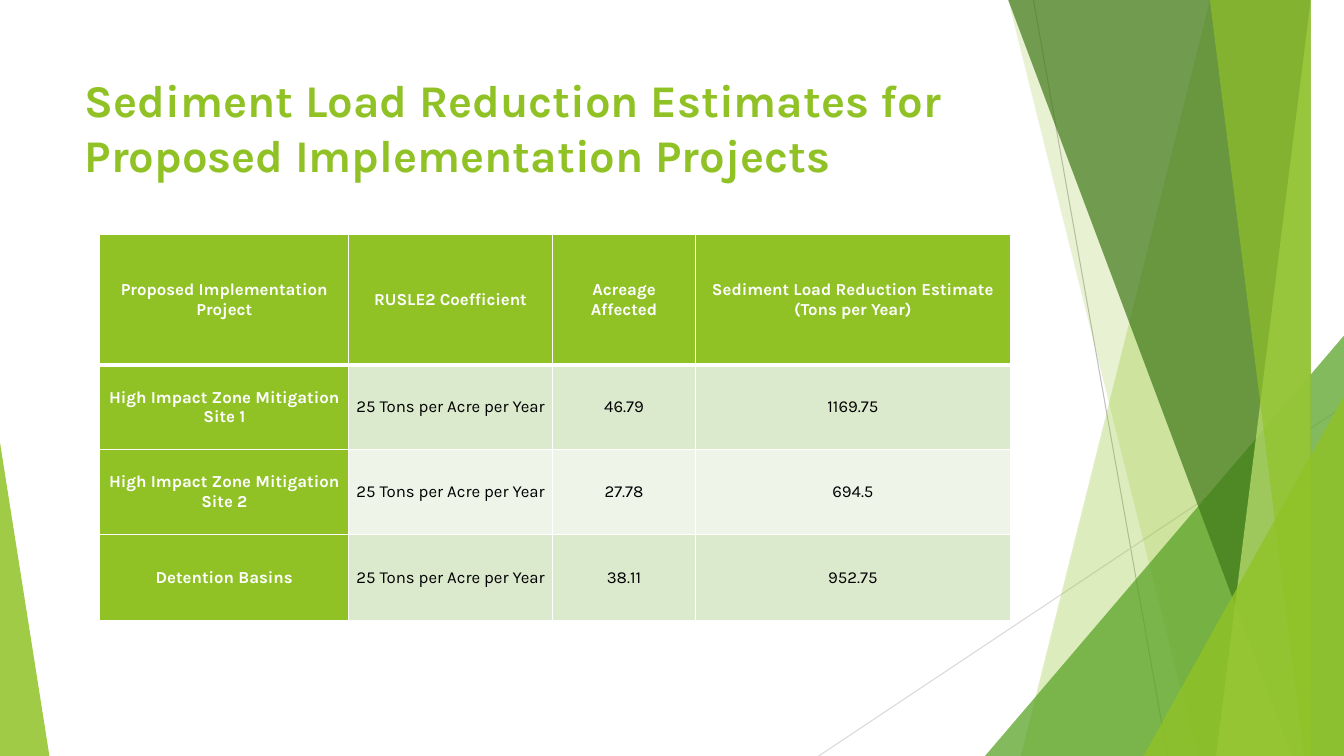
from lxml.etree import SubElement
from pptx import Presentation
from pptx.dml.color import RGBColor
from pptx.enum.shapes import MSO_CONNECTOR, MSO_SHAPE
from pptx.enum.text import MSO_ANCHOR as Anchor, PP_ALIGN as Align
from pptx.oxml import parse_xml
from pptx.oxml.ns import nsdecls, qn
from pptx.util import Inches, Pt

WIDTH, HEIGHT = 13.33, 7.5
LIME, WHITE, BLACK = "90C226", "FFFFFF", "000000"


def write(frame, text, size=12, color=BLACK, bold=False, align=Align.CENTER):
    frame.word_wrap = True
    paragraph = frame.paragraphs[0]
    paragraph.text = text
    paragraph.alignment = align
    font = paragraph.runs[0].font
    font.name, font.size, font.bold = "Karla", Pt(size), bold
    font.color.rgb = RGBColor.from_string(color)


def tint(shape, color, opacity):
    shape.shadow.inherit = False
    shape.line.fill.background()
    shape.fill.solid()
    shape.fill.fore_color.rgb = RGBColor.from_string(color)
    color_element = shape.fill._xPr.find(qn("a:solidFill"))[0]
    SubElement(color_element, qn("a:alpha"), val=str(opacity * 1000))


presentation = Presentation()
presentation.slide_width, presentation.slide_height = Inches(WIDTH), Inches(HEIGHT)
slide = presentation.slides.add_slide(presentation.slide_layouts[5])
shapes = slide.shapes

# Thin lines behind the facets
for start_x, start_y, end_x, color in [
    (10.25, 0, 11.58, "BFBFBF"),
    (WIDTH, 4.03, 8.12, "D9D9D9"),
]:
    line = shapes.add_connector(
        MSO_CONNECTOR.STRAIGHT,
        Inches(start_x), Inches(start_y), Inches(end_x), Inches(HEIGHT))
    line.line.color.rgb = RGBColor.from_string(color)
    line.line.width = Pt(0.75)
    SubElement(line._element.spPr, qn("a:effectLst"))

# Facets: bands from a top x and a bottom x to the right edge,
# triangles from left, width, height and tip, standing on the bottom edge
facets = [
    ("band", (12.28, 10.04), LIME, 30),
    ("band", (10.5, 11.83), LIME, 20),
    ("triangle", (9.77, 3.56, 4.17, 1), "54A021", 72),
    ("band", (10.21, 12.91), "3F7819", 70),
    ("band", (13.03, 11.92), "C0E474", 70),
    ("band", (11.96, 13.18), LIME, 65),
    ("triangle", (11.34, 1.99, 3.57, 1), LIME, 80),
    ("triangle", (0, 0.49, 3.11, 0), LIME, 85),
]
for kind, geometry, color, opacity in facets:
    if kind == "band":
        top_x, bottom_x = geometry
        builder = shapes.build_freeform(top_x, -0.01, scale=Inches(1))
        builder.add_line_segments(
            [(WIDTH, -0.01), (WIDTH, HEIGHT), (bottom_x, HEIGHT)], close=True)
        facet = builder.convert_to_shape()
    else:
        left, width, height, tip = geometry
        facet = shapes.add_shape(
            MSO_SHAPE.ISOSCELES_TRIANGLE,
            Inches(left), Inches(HEIGHT - height), Inches(width), Inches(height))
        facet.adjustments[0] = tip
    tint(facet, color, opacity)

# Title
title = shapes.title
title.left, title.top = Inches(0.74), Inches(0.67)
title.width, title.height = Inches(9.4), Inches(1.44)
title.text_frame.vertical_anchor = Anchor.TOP
write(title.text_frame,
      "Sediment Load Reduction Estimates for Proposed Implementation Projects",
      size=32.4, color=LIME, bold=True, align=Align.LEFT)

# Table of estimates
COEFFICIENT = "25 Tons per Acre per Year"
rows = [
    ("Proposed Implementation Project", "RUSLE2 Coefficient", "Acreage Affected",
     "Sediment Load Reduction Estimate (Tons per Year)"),
    ("High Impact Zone Mitigation Site 1", COEFFICIENT, "46.79", "1169.75"),
    ("High Impact Zone Mitigation Site 2", COEFFICIENT, "27.78", "694.5"),
    ("Detention Basins", COEFFICIENT, "38.11", "952.75"),
]
column_widths = [2.47, 2.02, 1.42, 3.12]
row_heights = [1.29, 0.84, 0.84, 0.86]
table = shapes.add_table(
    len(rows), len(column_widths), Inches(0.99), Inches(2.33),
    Inches(sum(column_widths)), Inches(sum(row_heights))).table
table.first_col = True
for column, width in zip(table.columns, column_widths):
    column.width = Inches(width)
for row, height in zip(table.rows, row_heights):
    row.height = Inches(height)

for row_index, texts in enumerate(rows):
    for column_index, text in enumerate(texts):
        cell = table.cell(row_index, column_index)
        heading = row_index == 0 or column_index == 0
        cell.vertical_anchor = Anchor.MIDDLE
        cell.margin_left = cell.margin_right = Inches(0.07)
        cell.margin_top = cell.margin_bottom = 0
        write(cell.text_frame, text, color=WHITE if heading else BLACK, bold=heading)

        # White borders, heavier between the header and the body
        for side in "LRTB":
            heavy = (row_index, side) in [(0, "B"), (1, "T")]
            cell._tc.get_or_add_tcPr().append(parse_xml(
                f'<a:ln{side} {nsdecls("a")} w="{Pt(3 if heavy else 1)}"><a:solidFill>'
                f'<a:srgbClr val="{WHITE}"/></a:solidFill></a:ln{side}>'))
        band_color = "DBE9CD" if row_index % 2 else "EEF4E8"
        cell.fill.solid()
        cell.fill.fore_color.rgb = RGBColor.from_string(LIME if heading else band_color)

presentation.save("out.pptx")
